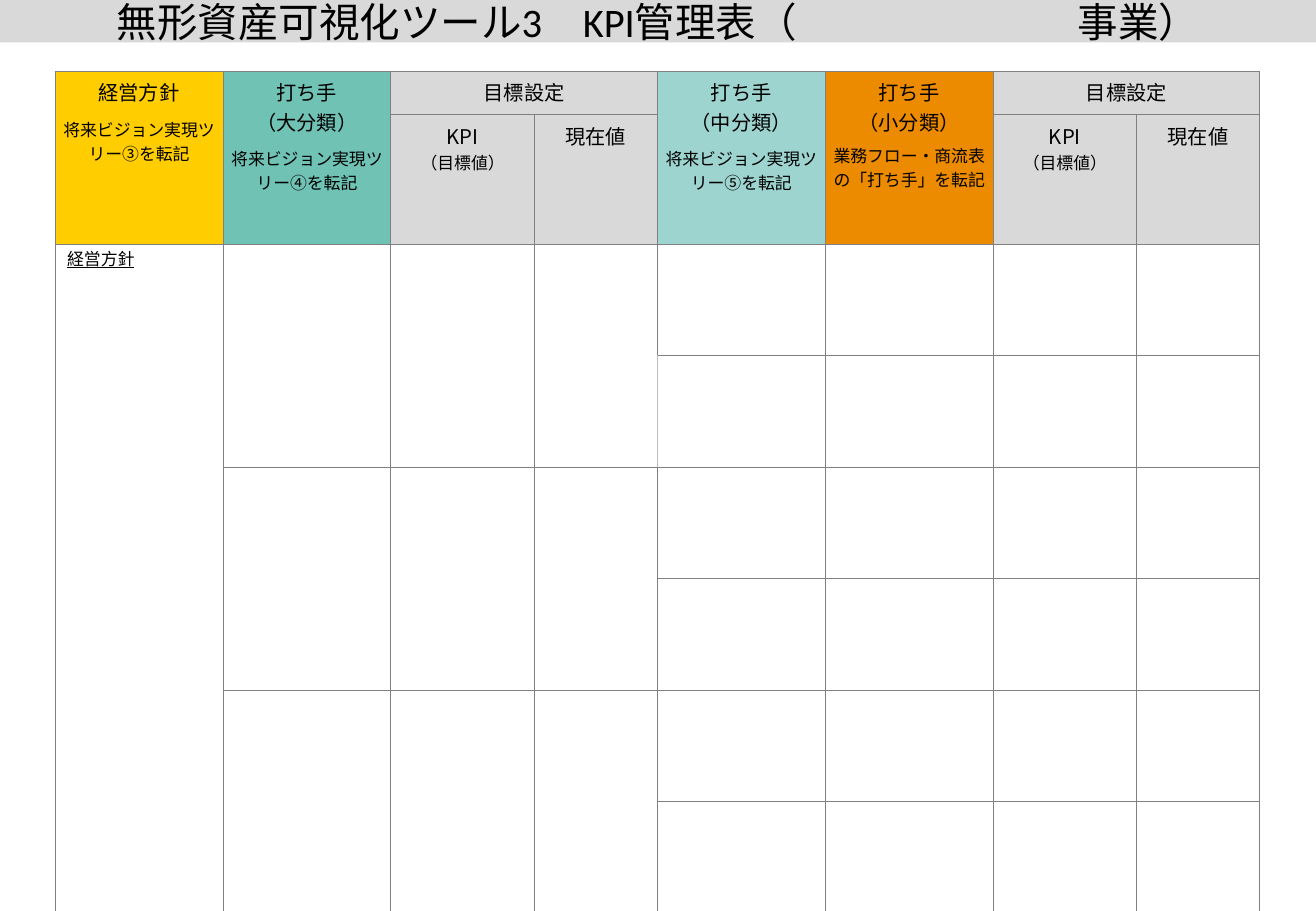
import pptx
import pptx.util
import pptx.dml.color
import pptx.enum.text
import pptx.enum.shapes
import pptx.oxml.ns
from lxml import etree

Cm, Pt = pptx.util.Cm, pptx.util.Pt
ALIGN = pptx.enum.text.PP_ALIGN

# Content
JAPANESE, LATIN = "Noto Sans CJK JP", "Calibri"
GREY, RULE, PALE_RULE = "D9D9D9", "808080", "BBBCBC"
TITLE = "無形資産可視化ツール3　KPI管理表（\t事業）"  # the tab leaves the blank for the business name

HEAD = {"size": 12, "after": 6}
NOTE = {"size": 10, "after": 6}
TARGET = [("目標設定", HEAD)]
KPI = [("KPI", {"size": 12}), ("（目標値）", NOTE)]
CURRENT = [("現在値", HEAD)]

# (row, column, rows spanned, columns spanned, fill, paragraphs)
HEADINGS = [
    (0, 0, 2, 1, "FFCD00", [("経営方針", HEAD), ("将来ビジョン実現ツリー③を転記", NOTE)]),
    (0, 1, 2, 1, "6FC2B4", [("打ち手\n（大分類）", HEAD), ("将来ビジョン実現ツリー④を転記", NOTE)]),
    (0, 4, 2, 1, "9DD4CF", [("打ち手\n（中分類）", HEAD), ("将来ビジョン実現ツリー⑤を転記", NOTE)]),
    (0, 5, 2, 1, "ED8B00", [("打ち手\n（小分類）", HEAD),
                            ("業務フロー・商流表", {"size": 10, "face": LATIN}),
                            ("の「打ち手」を転記", NOTE)]),
]
for target_column in (2, 6):
    HEADINGS += [
        (0, target_column, 1, 2, GREY, TARGET),
        (1, target_column, 1, 1, GREY, KPI),
        (1, target_column + 1, 1, 1, GREY, CURRENT),
    ]

# Layout
SLIDE_WIDTH, SLIDE_HEIGHT = Cm(27.51), Cm(19.05)
HALF_WIDTHS = [3.51, 3.51, 3, 2.57]
COLUMN_WIDTHS = HALF_WIDTHS * 2
HEADER_ROWS, ACTION_ROWS, ROWS_PER_GROUP = 2, 6, 2
ROW_HEIGHTS = [0.91, 1.35] + [2.33] * ACTION_ROWS
TABLE_LEFT, TABLE_TOP = 1.15, 1.49
TITLE_START, BUSINESS_START = 2.44, 22.53


def colour(value):
    return pptx.dml.color.RGBColor.from_string(value)


def paint(target, value):
    target.fill.solid()
    target.fill.fore_color.rgb = colour(value)


def write(paragraph, text, size=10, face=JAPANESE, align=ALIGN.CENTER, after=0, underline=None):
    paragraph.alignment = align
    paragraph.space_after = Pt(after)
    for index, line in enumerate(text.split("\n")):
        if index:
            paragraph.add_line_break()
        run = paragraph.add_run()
        run.text = line
        run.font.size = Pt(size)
        run.font.name = face
        run.font.underline = underline
        run.font.color.rgb = colour("000000")
        east_asian = etree.SubElement(run.font._element, pptx.oxml.ns.qn("a:ea"))
        east_asian.set("typeface", face)


def rule_cell(cell, left=RULE):
    properties = cell._tc.get_or_add_tcPr()
    for side, value in (("L", left), ("R", RULE), ("T", RULE), ("B", RULE)):
        line = etree.SubElement(properties, pptx.oxml.ns.qn("a:ln" + side), w=str(Pt(0.5)))
        solid = etree.SubElement(line, pptx.oxml.ns.qn("a:solidFill"))
        etree.SubElement(solid, pptx.oxml.ns.qn("a:srgbClr"), val=value)


def build_table(slide):
    table = slide.shapes.add_table(
        len(ROW_HEIGHTS), len(COLUMN_WIDTHS), Cm(TABLE_LEFT), Cm(TABLE_TOP),
        Cm(sum(COLUMN_WIDTHS)), Cm(sum(ROW_HEIGHTS))).table
    table.first_row = table.horz_banding = False
    for column, width in zip(table.columns, COLUMN_WIDTHS):
        column.width = Cm(width)
    for row, height in zip(table.rows, ROW_HEIGHTS):
        row.height = Cm(height)

    # Rules, with one pale edge beside the second action
    for row in range(len(ROW_HEIGHTS)):
        for column in range(len(COLUMN_WIDTHS)):
            cell = table.cell(row, column)
            rule_cell(cell, PALE_RULE if (row, column) == (3, 4) else RULE)
            cell.fill.background()

    # Headings
    for row, column, down, across, fill, paragraphs in HEADINGS:
        cell = table.cell(row, column)
        if down * across > 1:
            cell.merge(table.cell(row + down - 1, column + across - 1))
        paint(cell, fill)
        cell.margin_left = cell.margin_right = Cm(0.1)
        frame = cell.text_frame
        for index, (text, style) in enumerate(paragraphs):
            write(frame.add_paragraph() if index else frame.paragraphs[0], text, **style)

    # Policy column and the groups of actions
    last_row = len(ROW_HEIGHTS) - 1
    policy = table.cell(HEADER_ROWS, 0)
    policy.merge(table.cell(last_row, 0))
    write(policy.text_frame.paragraphs[0], "経営方針", face="Arial",
          align=ALIGN.LEFT, underline=True)
    for row in range(HEADER_ROWS, last_row, ROWS_PER_GROUP):
        for column in (1, 2, 3):
            table.cell(row, column).merge(table.cell(row + ROWS_PER_GROUP - 1, column))


def build_title(slide):
    banner = slide.shapes.add_shape(
        pptx.enum.shapes.MSO_SHAPE.RECTANGLE, 0, 0, SLIDE_WIDTH, Cm(0.89))
    banner.shadow.inherit = False
    paint(banner, GREY)
    banner.line.fill.background()
    frame = banner.text_frame
    frame.word_wrap = True
    frame.vertical_anchor = pptx.enum.text.MSO_ANCHOR.MIDDLE
    frame.margin_left = Cm(TITLE_START)
    frame.margin_right = frame.margin_top = frame.margin_bottom = Cm(0.2)
    paragraph = frame.paragraphs[0]
    tabs = etree.SubElement(paragraph._p.get_or_add_pPr(), pptx.oxml.ns.qn("a:tabLst"))
    etree.SubElement(tabs, pptx.oxml.ns.qn("a:tab"),
                     pos=str(Cm(BUSINESS_START - TITLE_START)), algn="l")
    write(paragraph, TITLE, size=24, face=LATIN, align=ALIGN.LEFT)


def main():
    deck = pptx.Presentation()
    deck.slide_width, deck.slide_height = SLIDE_WIDTH, SLIDE_HEIGHT
    slide = deck.slides.add_slide(deck.slide_layouts[6])
    build_table(slide)
    build_title(slide)
    deck.save("out.pptx")


if __name__ == "__main__":
    main()
